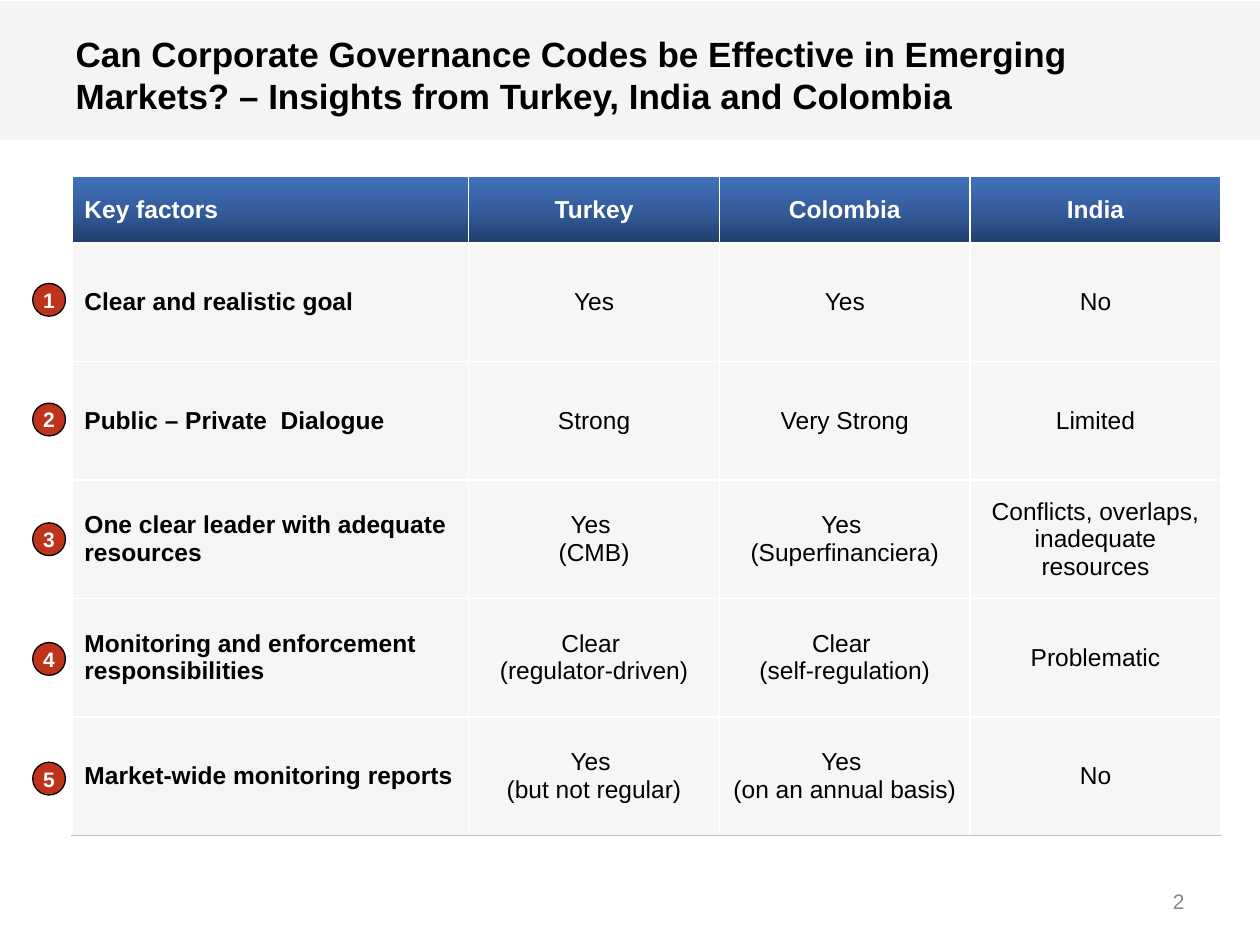
import dataclasses

import lxml.etree
import pptx
import pptx.dml.color
import pptx.enum.shapes
import pptx.enum.text
import pptx.oxml.ns
import pptx.util

WIDTH, HEIGHT = 10, 7.5
FONT = "Arial"
WHITE, BLACK = "FFFFFF", "000000"
LEFT = pptx.enum.text.PP_ALIGN.LEFT
CENTER = pptx.enum.text.PP_ALIGN.CENTER
RIGHT = pptx.enum.text.PP_ALIGN.RIGHT
MIDDLE = pptx.enum.text.MSO_ANCHOR.MIDDLE
HEADER_STOPS = ((0, "223E6C"), (50, "355D9D"), (100, "4170BB"))
TABLE_LEFT, TABLE_TOP = 0.57, 1.4
COLUMN_WIDTHS = (3.15, 1.99, 1.99, 1.99)
HEADER_HEIGHT, ROW_HEIGHT = 0.53, 0.94
BADGE_LEFT, BADGE_TOP, BADGE_SIZE, BADGE_STEP = 0.26, 2.25, 0.26, 0.95


@dataclasses.dataclass(frozen=True)
class Factor:
    name: str
    turkey: str
    colombia: str
    india: str


HEADER = Factor("Key factors", "Turkey", "Colombia", "India")
FACTORS = (
    Factor("Clear and realistic goal", "Yes", "Yes", "No"),
    Factor("Public – Private  Dialogue", "Strong", "Very Strong", "Limited"),
    Factor("One clear leader with adequate resources", "Yes \n(CMB)",
           "Yes \n(Superfinanciera)", "Conflicts, overlaps,\ninadequate resources"),
    Factor("Monitoring and enforcement responsibilities", "Clear \n(regulator-driven)",
           "Clear \n(self-regulation)", "Problematic"),
    Factor("Market-wide monitoring reports", "Yes \n(but not regular)",
           "Yes \n(on an annual basis)", "No"),
)


def color(value: str) -> pptx.dml.color.RGBColor:
    return pptx.dml.color.RGBColor.from_string(value)


def box(left: float, top: float, width: float, height: float) -> tuple:
    return tuple(pptx.util.Inches(length) for length in (left, top, width, height))


def write(text_frame, text: str, *, size: float, fill: str = BLACK,
          bold: bool = False, align=LEFT) -> None:
    paragraph = text_frame.paragraphs[0]
    paragraph.text = text
    paragraph.alignment = align
    for run in paragraph.runs:
        run.font.name = FONT
        run.font.size = pptx.util.Pt(size)
        run.font.bold = bold
        run.font.color.rgb = color(fill)


def add_plain_shape(slide, kind, place: tuple, fill: str):
    shape = slide.shapes.add_shape(kind, *place)
    shape.shadow.inherit = False
    shape.fill.solid()
    shape.fill.fore_color.rgb = color(fill)
    shape.line.fill.background()
    return shape


def add_element(parent, tag: str, **attributes: str):
    return lxml.etree.SubElement(parent, pptx.oxml.ns.qn(tag), attributes)


def add_border(cell, tag: str, value: str, width: float) -> None:
    line = add_element(cell._tc.get_or_add_tcPr(), tag, w=str(pptx.util.Pt(width)))
    add_element(add_element(line, "a:solidFill"), "a:srgbClr", val=value)


def add_header_gradient(cell) -> None:
    gradient = add_element(cell._tc.get_or_add_tcPr(), "a:gradFill", rotWithShape="1")
    stops = add_element(gradient, "a:gsLst")
    for percent, value in HEADER_STOPS:
        stop = add_element(stops, "a:gs", pos=str(percent * 1000))
        add_element(stop, "a:srgbClr", val=value)
    add_element(gradient, "a:lin", ang=str(270 * 60000), scaled="0")


def format_cell(cell, text: str, row: int, column: int) -> None:
    is_header, is_name = row == 0, column == 0
    cell.vertical_anchor = MIDDLE
    write(cell.text_frame, text, size=14, fill=WHITE if is_header else BLACK,
          bold=is_header or is_name, align=LEFT if is_name else CENTER)
    for tag in ("a:lnL", "a:lnR", "a:lnT"):
        add_border(cell, tag, WHITE, 1)
    if row == len(FACTORS):
        add_border(cell, "a:lnB", "BFBFBF", 0.5)
    else:
        add_border(cell, "a:lnB", WHITE, 1)
    if is_header:
        add_header_gradient(cell)
    else:
        cell.fill.solid()
        cell.fill.fore_color.rgb = color("F5F5F5" if is_name else "F7F6F5")


def add_factor_table(slide) -> None:
    rows = (HEADER, *FACTORS)
    heights = (HEADER_HEIGHT, *[ROW_HEIGHT] * len(FACTORS))
    place = box(TABLE_LEFT, TABLE_TOP, sum(COLUMN_WIDTHS), sum(heights))
    table = slide.shapes.add_table(len(rows), len(COLUMN_WIDTHS), *place).table
    table.horz_banding = False
    for column, width in zip(table.columns, COLUMN_WIDTHS):
        column.width = pptx.util.Inches(width)
    for row, (factor, height) in enumerate(zip(rows, heights)):
        table.rows[row].height = pptx.util.Inches(height)
        for column, text in enumerate(dataclasses.astuple(factor)):
            format_cell(table.cell(row, column), text, row, column)


def add_badge(slide, number: int) -> None:
    top = BADGE_TOP + (number - 1) * BADGE_STEP
    badge = add_plain_shape(slide, pptx.enum.shapes.MSO_SHAPE.OVAL,
                            box(BADGE_LEFT, top, BADGE_SIZE, BADGE_SIZE), "BE331C")
    badge.line.color.rgb = color(BLACK)
    badge.line.width = pptx.util.Pt(0.75)
    badge.text_frame.word_wrap = False
    badge.text_frame.vertical_anchor = MIDDLE
    write(badge.text_frame, str(number), size=12, fill=WHITE, bold=True, align=CENTER)


def add_heading(slide) -> None:
    band = add_plain_shape(slide, pptx.enum.shapes.MSO_SHAPE.RECTANGLE,
                           box(0, 0.01, WIDTH, 1.1), "F4F4F4")
    title = slide.shapes.title
    title._element.addprevious(band._element)
    title.left, title.top, title.width, title.height = box(0.5, 0.16, 0.9 * WIDTH, 0.86)
    title.text_frame.vertical_anchor = MIDDLE
    write(title.text_frame, "Can Corporate Governance Codes be Effective in Emerging "
          "Markets? – Insights from Turkey, India and Colombia", size=20, bold=True)


def add_page_number(slide) -> None:
    number = slide.shapes.add_textbox(*box(7.17, 6.95, 2.33, 0.4))
    number.text_frame.word_wrap = True
    number.text_frame.vertical_anchor = MIDDLE
    write(number.text_frame, "2", size=12, fill="898989", align=RIGHT)


def main() -> None:
    presentation = pptx.Presentation()
    presentation.slide_width = pptx.util.Inches(WIDTH)
    presentation.slide_height = pptx.util.Inches(HEIGHT)
    slide = presentation.slides.add_slide(presentation.slide_layouts[5])
    add_heading(slide)
    add_page_number(slide)
    add_factor_table(slide)
    for number in range(1, len(FACTORS) + 1):
        add_badge(slide, number)
    presentation.save("out.pptx")


if __name__ == "__main__":
    main()
